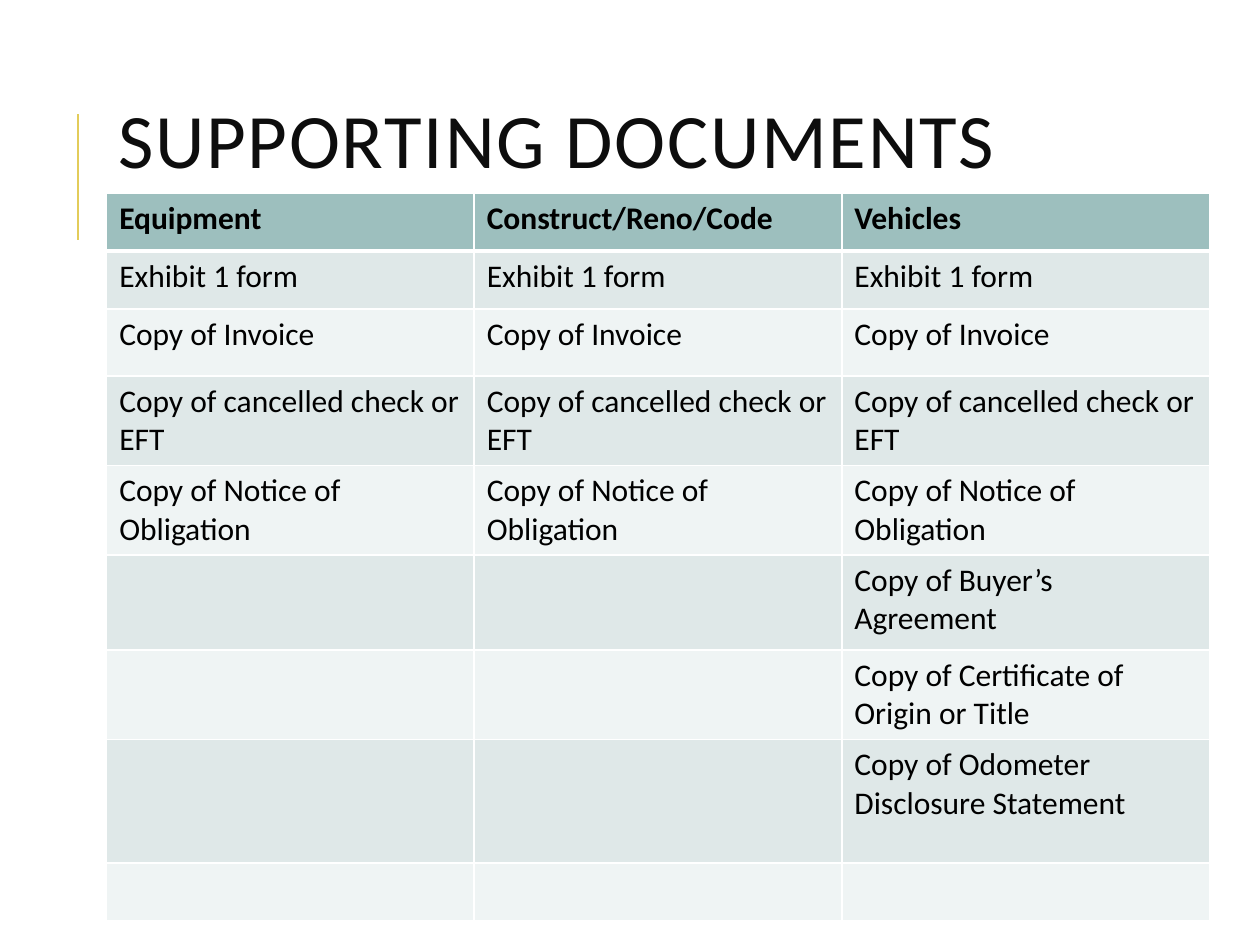
from pptx import Presentation
from pptx.dml.color import RGBColor
from pptx.enum.shapes import MSO_CONNECTOR
from pptx.enum.text import MSO_ANCHOR, MSO_AUTO_SIZE, PP_ALIGN
from pptx.oxml.ns import qn
from pptx.util import Cm, Pt
from lxml.etree import SubElement

FONT = "Calibri"
WHITE = "FFFFFF"
HEAD = "9DBFBE"
BANDS = ["EFF4F4", "DFE8E8"]
COLS = 3
HEIGHTS = [1.17, 1.17, 1.35, 1.73, 1.73, 1.91, 1.73, 2.49, 1.17]

# No-break spaces keep some words together when lines wrap.
SHARED = [
    "Exhibit 1 form",
    "Copy of Invoice",
    "Copy of cancelled check or EFT",
    "Copy of Notice of Obligation",
]
VEHICLE = [
    "Copy of Buyer’s Agreement",
    "Copy of Certificate of Origin or Title",
    "Copy of Odometer Disclosure Statement",
]
ROWS = (
    [["Equipment", "Construct/Reno/Code", "Vehicles"]]
    + [[text] * COLS for text in SHARED]
    + [["", "", text] for text in VEHICLE]
    + [[""] * COLS]
)


def color(code):
    return RGBColor.from_string(code)


def set_font(para, size, code, bold=False):
    font = para.font
    font.name, font.size, font.bold = FONT, Pt(size), bold
    font.color.rgb = color(code)


def add_title(slide, text):
    title = slide.shapes.title
    title.left, title.top = Cm(2.13), Cm(1.63)
    title.width, title.height = Cm(20.24), Cm(2.64)
    frame = title.text_frame
    frame.auto_size = MSO_AUTO_SIZE.NONE
    frame.word_wrap = True
    frame.vertical_anchor = MSO_ANCHOR.MIDDLE
    para = frame.paragraphs[0]
    para.alignment = PP_ALIGN.LEFT
    para.line_spacing = 0.8
    set_font(para, 44, "0D0D0D")
    run = para.add_run()
    run.text = text
    run._r.get_or_add_rPr().set("spc", "100")


def add_rule(slide):
    rule = slide.shapes.add_connector(
        MSO_CONNECTOR.STRAIGHT, Cm(1.57), Cm(4.83), Cm(1.57), Cm(2.29))
    rule.line.color.rgb = color("E3CC5A")
    rule.line.width = Pt(1.5)
    SubElement(rule._element.spPr, qn("a:effectLst"))


def add_borders(cell, base):
    """Draw white edges, with the bottom one base points wide."""
    props = cell._tc.get_or_add_tcPr()
    for side, width in zip("LRTB", (1, 1, 1, base)):
        line = SubElement(props, qn(f"a:ln{side}"), w=str(Pt(width)))
        fill = SubElement(line, qn("a:solidFill"))
        SubElement(fill, qn("a:srgbClr"), val=WHITE)


def fill_cell(cell, text, row):
    head = row == 0
    add_borders(cell, 3 if head else 1)
    cell.fill.solid()
    cell.fill.fore_color.rgb = color(HEAD if head else BANDS[row % 2])
    cell.text = text
    set_font(cell.text_frame.paragraphs[0], 18, "000000", head)


def add_grid(slide):
    frame = slide.shapes.add_table(
        len(ROWS), COLS, Cm(2.15), Cm(3.89), Cm(22.23), Cm(sum(HEIGHTS)))
    table = frame.table
    table.first_row = table.horz_banding = False
    for row, texts in enumerate(ROWS):
        table.rows[row].height = Cm(HEIGHTS[row])
        for col, text in enumerate(texts):
            fill_cell(table.cell(row, col), text, row)
    # The head's thick edge is also the top edge of the row below.
    for cell in table.rows[1].cells:
        cell._tc.tcPr.find(qn("a:lnT")).set("w", str(Pt(3)))


def main():
    deck = Presentation()
    deck.slide_width, deck.slide_height = Cm(25.4), Cm(19.05)
    slide = deck.slides.add_slide(deck.slide_layouts[5])
    add_rule(slide)
    add_title(slide, "SUPPORTING DOCUMENTS")
    add_grid(slide)
    deck.save("out.pptx")


if __name__ == "__main__":
    main()
